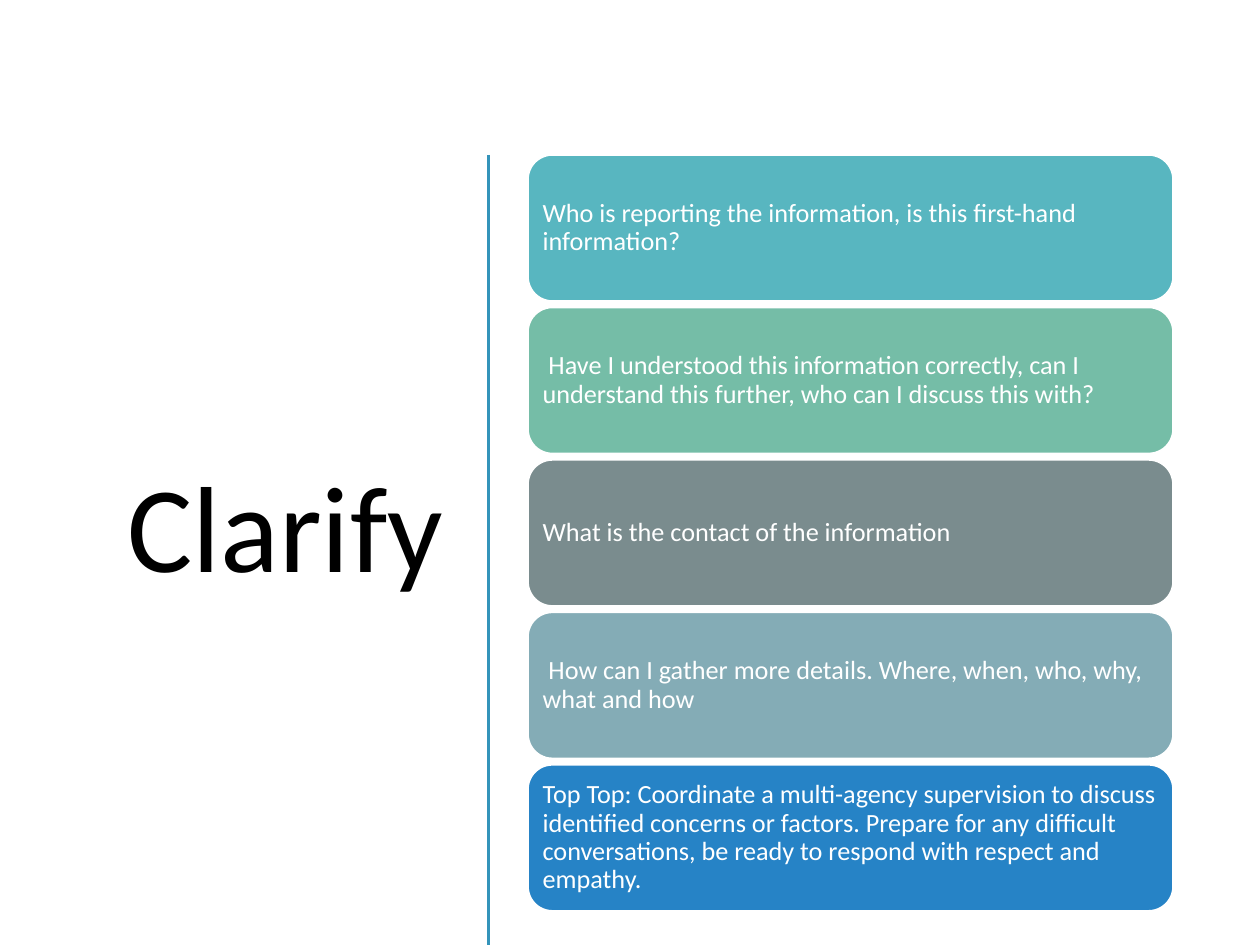
from dataclasses import dataclass

from lxml.etree import SubElement as SubEl
from pptx import Presentation
from pptx.dml.color import RGBColor as RGB
from pptx.enum.shapes import MSO_CONNECTOR as Conn, MSO_SHAPE as Shape
from pptx.enum.text import MSO_ANCHOR as Anchor, MSO_AUTO_SIZE as Fit, PP_ALIGN as Align
from pptx.oxml.ns import qn
from pptx.util import Pt

PX = 9144  # EMU per px, 100 px to the inch
FONT = "Calibri"
WHITE = RGB(0xFF, 0xFF, 0xFF)
BLACK = RGB(0x00, 0x00, 0x00)
BLUE = RGB(0x34, 0x94, 0xBA)
TEAL = RGB(0x58, 0xB6, 0xC0)
GREEN = RGB(0x75, 0xBD, 0xA7)
GREY = RGB(0x7A, 0x8C, 0x8E)
MIST = RGB(0x84, 0xAC, 0xB6)
AZURE = RGB(0x26, 0x83, 0xC6)

LEFT, TOP, WIDE, HIGH, STEP = 419, 123, 512, 116, 121
INSET = 6


@dataclass
class Card:
    text: str
    fill: RGB


CARDS = [
    Card("Who is reporting the information, is this first-hand information?", TEAL),
    Card(" Have I understood this information correctly, can I understand "
         "this further, who can I discuss this with?", GREEN),
    Card("What is the contact of the information", GREY),
    Card(" How can I gather more details. Where, when, who, why, what and how", MIST),
    Card("Top Top: Coordinate a multi-agency supervision to discuss identified "
         "concerns or factors. Prepare for any difficult conversations, be ready "
         "to respond with respect and empathy.", AZURE),
]


def px(*nums: int) -> list[int]:
    return [num * PX for num in nums]


def write(frame, text: str, size: int, color: RGB, align: Align) -> None:
    frame.word_wrap = True
    frame.auto_size = Fit.NONE
    frame.vertical_anchor = Anchor.MIDDLE
    para = frame.paragraphs[0]
    para.alignment = align
    para.line_spacing = 0.9
    run = para.add_run()
    run.text = text
    run.font.name = FONT
    run.font.size = Pt(size)
    run.font.color.rgb = color


def add_box(shapes, kind: Shape, fill: RGB, *area: int):
    box = shapes.add_shape(kind, *px(*area))
    box.shadow.inherit = False
    box.fill.solid()
    box.fill.fore_color.rgb = fill
    return box


def draw_card(group, card: Card, top: int) -> None:
    box = add_box(group.shapes, Shape.ROUNDED_RECTANGLE, card.fill,
                  LEFT, top, WIDE, HIGH)
    box.line.color.rgb = WHITE
    box.line.width = Pt(1)
    frame = box.text_frame
    frame.margin_left = frame.margin_right = INSET * PX
    frame.margin_top = frame.margin_bottom = INSET * PX
    write(frame, card.text, 15, WHITE, Align.LEFT)


def main() -> None:
    deck = Presentation()
    deck.slide_width, deck.slide_height = px(1000, 750)
    slide = deck.slides.add_slide(deck.slide_layouts[5])
    title = slide.shapes.title

    # Backdrop, behind the title
    back = add_box(slide.shapes, Shape.RECTANGLE, WHITE, 0, 1, 1000, 750)
    back.line.fill.background()
    title._element.addprevious(back._element)

    # Title
    title.left, title.top, title.width, title.height = px(39, 117, 323, 611)
    write(title.text_frame, "Clarify", 70, BLACK, Align.RIGHT)

    # Divider
    rule = slide.shapes.add_connector(Conn.STRAIGHT, *px(388, 123, 388, 750))
    rule.line.color.rgb = BLUE
    rule.line.width = Pt(1.75)
    SubEl(rule._element.spPr, qn("a:effectLst"))

    # Question cards
    group = slide.shapes.add_group_shape()
    for row, card in enumerate(CARDS):
        draw_card(group, card, TOP + row * STEP)

    deck.save("out.pptx")


if __name__ == "__main__":
    main()
